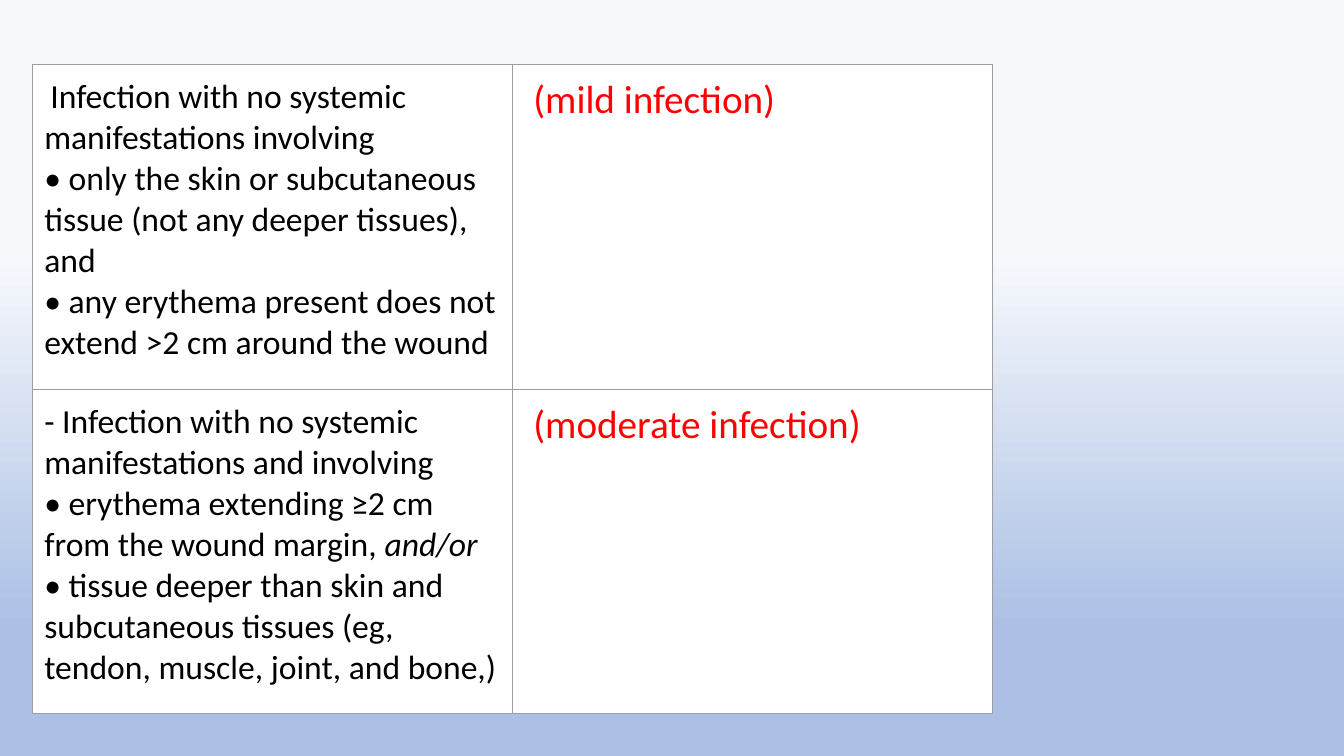
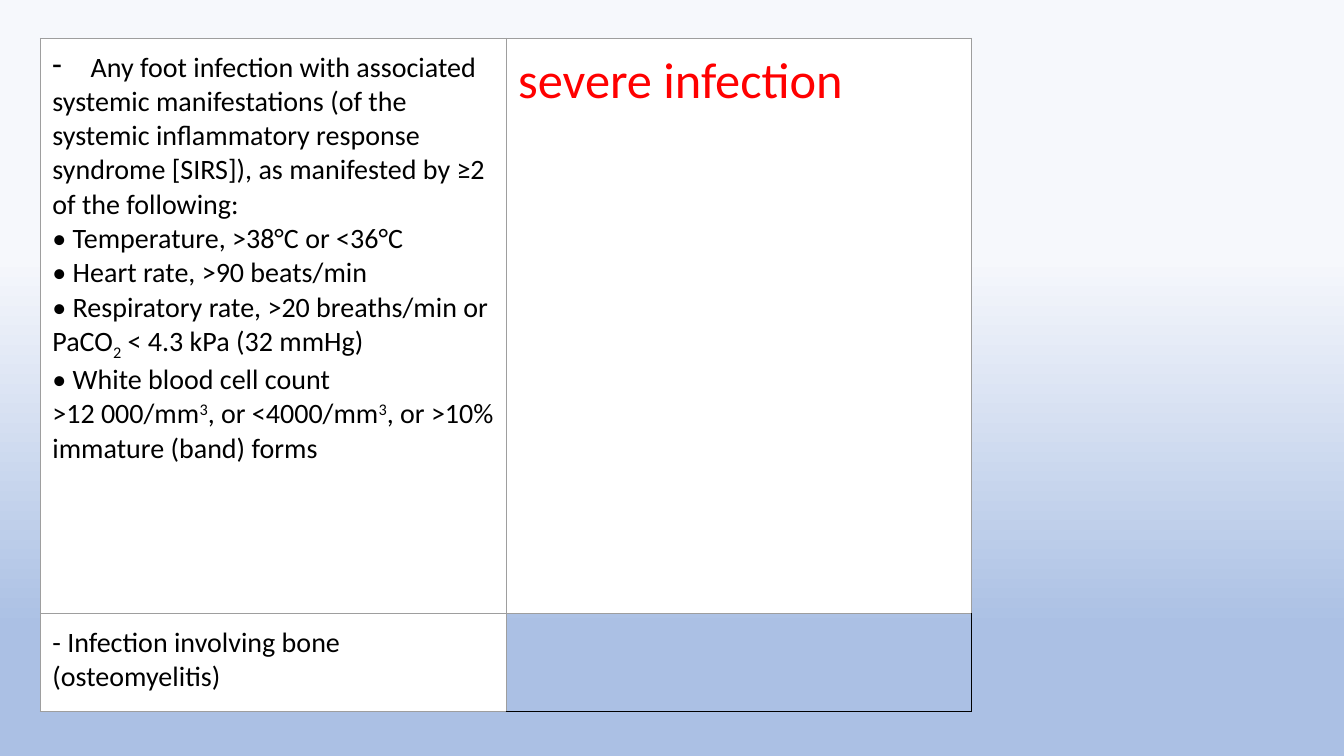
from dataclasses import dataclass

from lxml import etree
from pptx import Presentation
from pptx.dml.color import RGBColor
from pptx.oxml.ns import qn
from pptx.util import Emu, Pt

EMU_PER_PX = 9144
BLANK_LAYOUT = 6
SIDES = ("L", "R", "T", "B")


@dataclass(frozen=True)
class Theme:
    """Colours, type sizes and insets shared by the slides."""
    font: str = "Calibri"
    ink: str = "000000"
    alert: str = "FF0000"
    paper: str = "FFFFFF"
    grid: str = "9E9E9E"
    body: int = 24
    compact: int = 20
    grade: int = 28
    severe: int = 36
    grid_width: float = 0.75
    inset: int = 12
    inset_bottom: int = 5
    backdrop: tuple = ((34, "F6F8FC"), (83, "ABC0E4"), (100, "ABC0E4"), (100, "C7D5ED"))


@dataclass(frozen=True)
class Line:
    """One paragraph: its (text, format) runs, left margin, first-line indent and bullet."""
    runs: tuple
    left: int = 0
    first: int = 0
    bullet: str = ""


@dataclass(frozen=True)
class Cell:
    """The content and look of one table cell."""
    lines: tuple = ()
    size: int = 18
    color: str = "000000"
    filled: bool = True
    bottom: int = 5


THEME = Theme()
ITALIC = {"i": "1"}
SUBSCRIPT = {"baseline": "-25000"}
SUPERSCRIPT = {"baseline": "30000"}


def px(length):
    """Turn px into EMU."""
    return Emu(length * EMU_PER_PX)


def plain(text, **layout):
    """Return a paragraph made of a single run."""
    return Line(((text, {}),), **layout)


def add_color(parent, color):
    """Append an RGB colour element."""
    etree.SubElement(parent, qn("a:srgbClr"), val=color)


def paint_backdrop(master):
    """Give the slide master the vertical gradient."""
    fill = master.background.fill
    fill.gradient()
    fill.gradient_angle = 270
    stops = next(master.element.iter(qn("a:gsLst")))
    for stop in list(stops):
        stops.remove(stop)
    for position, color in THEME.backdrop:
        stop = etree.SubElement(stops, qn("a:gs"), pos=str(position * 1000))
        add_color(stop, color)


def add_border(properties, side, color):
    """Draw one side of a cell."""
    border = etree.SubElement(properties, qn(f"a:ln{side}"), w=str(Pt(THEME.grid_width)))
    add_color(etree.SubElement(border, qn("a:solidFill")), color)


def write_line(paragraph, line, size, color):
    """Write the runs of a paragraph with its indents and bullet."""
    properties = paragraph._p.get_or_add_pPr()
    properties.set("marL", str(px(line.left)))
    properties.set("indent", str(px(line.first)))
    if line.bullet:
        etree.SubElement(properties, qn("a:buChar"), char=line.bullet)
    for text, run_format in line.runs:
        run = paragraph.add_run()
        run.text = text
        for name, value in {"name": THEME.font, "size": Pt(size)}.items():
            setattr(run.font, name, value)
        run.font.color.rgb = RGBColor.from_string(color)
        for name, value in run_format.items():
            run._r.get_or_add_rPr().set(name, value)


def fill_cell(cell, content):
    """Set insets, borders, fill and text of a cell."""
    insets = {"margin_left": THEME.inset, "margin_right": THEME.inset,
              "margin_top": THEME.inset, "margin_bottom": content.bottom}
    for name, value in insets.items():
        setattr(cell, name, px(value))
    for side in SIDES:
        outer = not content.filled and side in "RB"
        add_border(cell._tc.get_or_add_tcPr(), side, THEME.ink if outer else THEME.grid)
    if content.filled:
        cell.fill.solid()
        cell.fill.fore_color.rgb = RGBColor.from_string(THEME.paper)
    else:
        cell.fill.background()
    frame = cell.text_frame
    for index, line in enumerate(content.lines):
        paragraph = frame.add_paragraph() if index else frame.paragraphs[0]
        write_line(paragraph, line, content.size, content.color)


def add_grading_table(slide, left, top, column_width, row_heights, rows):
    """Add a table with equal columns."""
    columns = len(rows[0])
    frame = slide.shapes.add_table(len(rows), columns, px(left), px(top),
                                   px(column_width * columns), px(sum(row_heights)))
    table = frame.table
    for name in ("first_row", "horz_banding"):
        setattr(table, name, False)
    for row, height in zip(table.rows, row_heights):
        row.height = px(height)
    for row_index, row in enumerate(rows):
        for column_index, content in enumerate(row):
            fill_cell(table.cell(row_index, column_index), content)


def grade_cell(text, size, left=0):
    """Return the red cell that names a severity."""
    return Cell((plain(text, left=left),), size, THEME.alert)


def mild_and_moderate_rows():
    """Return the rows of the first slide."""
    mild = (
        plain("Infection with no systemic manifestations involving", first=6),
        plain("• only the skin or subcutaneous tissue (not any deeper tissues), and"),
        plain("• any erythema present does not extend >2 cm around the wound"),
    )
    moderate = (
        plain("- Infection with no systemic manifestations and involving"),
        Line((("• erythema extending ≥2 cm from the wound margin, ", {}), ("and/or", ITALIC))),
        plain("• tissue deeper than skin and subcutaneous tissues "
              "(eg, tendon, muscle, joint, and bone,)"),
    )
    return (
        (Cell(mild, THEME.body), grade_cell("(mild infection)", THEME.grade, 9)),
        (Cell(moderate, THEME.body), grade_cell("(moderate infection)", THEME.grade, 9)),
    )


def severe_rows():
    """Return the rows of the second slide."""
    severe = (
        plain("Any foot infection with associated", left=38, first=-38, bullet="-"),
        plain("systemic manifestations (of the"),
        plain("systemic inflammatory response syndrome [SIRS]), "
              "as manifested by ≥2 of the following:"),
        plain("• Temperature, >38°C or <36°C"),
        plain("• Heart rate, >90 beats/min"),
        Line((("• Respiratory rate, >20 breaths/min or PaCO", {}), ("2", SUBSCRIPT),
              (" < 4.3 kPa (32 mmHg)", {}))),
        plain("• White blood cell count"),
        Line(((">12 000/mm", {}), ("3", SUPERSCRIPT), (", or <4000/mm", {}),
              ("3", SUPERSCRIPT), (", or >10% immature (band) forms", {}))),
    )
    bone = (plain("- Infection involving bone (osteomyelitis)"),)
    return (
        (Cell(severe, THEME.compact), grade_cell("severe infection", THEME.severe)),
        (Cell(bone, THEME.compact, bottom=THEME.inset), Cell(filled=False)),
    )


def main():
    """Build and save the presentation."""
    presentation = Presentation()
    presentation.slide_width, presentation.slide_height = px(1333), px(750)
    paint_backdrop(presentation.slide_master)
    tables = (
        (32, 64, 476, (322, 322), mild_and_moderate_rows()),
        (40, 38, 462, (571, 97), severe_rows()),
    )
    for table in tables:
        slide = presentation.slides.add_slide(presentation.slide_layouts[BLANK_LAYOUT])
        add_grading_table(slide, *table)
    presentation.save("out.pptx")


if __name__ == "__main__":
    main()
